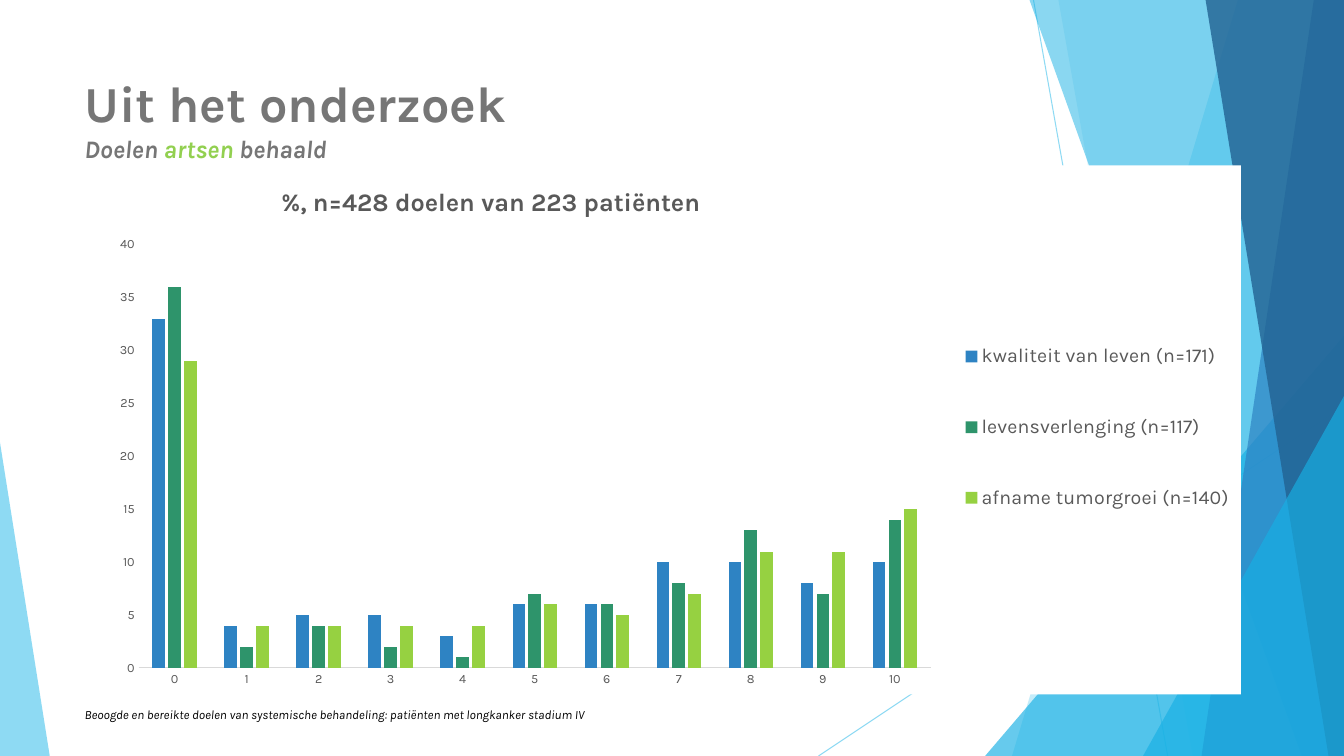
from lxml import etree
from pptx import Presentation
from pptx.chart.data import CategoryChartData
from pptx.dml.color import RGBColor
from pptx.enum.chart import XL_CHART_TYPE, XL_LEGEND_POSITION, XL_TICK_MARK
from pptx.enum.shapes import MSO_CONNECTOR, MSO_SHAPE
from pptx.enum.text import MSO_ANCHOR
from pptx.oxml import parse_xml
from pptx.oxml.ns import nsdecls, qn
from pptx.util import Inches, Pt

COLUMN_CHART = XL_CHART_TYPE.COLUMN_CLUSTERED
LEGEND_RIGHT = XL_LEGEND_POSITION.RIGHT
NO_TICK = XL_TICK_MARK.NONE
STRAIGHT = MSO_CONNECTOR.STRAIGHT
TRIANGLE = MSO_SHAPE.ISOSCELES_TRIANGLE
TOP, MIDDLE = MSO_ANCHOR.TOP, MSO_ANCHOR.MIDDLE

SKY, CYAN, BLUE, NAVY = "5FCBEF", "17B0E4", "2E83C3", "226292"
GREY, DARK_GREY, PALE_GREY = "767676", "595959", "D9D9D9"
BLACK, WHITE, LIME = "000000", "FFFFFF", "92D050"

RAYS = [((76.9, 0), (86.88, 100)), ((100, 53.7), (60.9, 100))]
BACK_BANDS = [(92.1, 75.3, SKY, 36), (78.75, 88.75, SKY, 20)]
FRONT_BANDS = [(76.6, 96.85, CYAN, 50), (97.75, 89.4, BLUE, 70), (89.7, 98.85, NAVY, 80)]

SERIES = [
    ("kwaliteit van leven (n=171)", (33, 4, 5, 5, 3, 6, 6, 10, 10, 8, 10), BLUE),
    ("levensverlenging (n=117)", (36, 2, 4, 2, 1, 7, 6, 8, 13, 7, 14), "2E946B"),
    ("afname tumorgroei (n=140)", (29, 4, 4, 4, 4, 6, 5, 7, 11, 11, 15), "96D141"),
]


def color(value):
    return RGBColor.from_string(value)


class SlideBuilder:
    font_name = "Karla"

    def __init__(self, presentation):
        self.column = presentation.slide_width / 100
        self.row = presentation.slide_height / 100
        self.slide = presentation.slides.add_slide(presentation.slide_layouts[6])
        self.shapes = self.slide.shapes

    def point(self, x, y):
        return round(x * self.column), round(y * self.row)

    def box(self, left, top, width, height):
        return (*self.point(left, top), *self.point(width, height))

    def style_font(self, font, size, font_color, bold=False, italic=False):
        font.name = self.font_name
        font.size = Pt(size)
        font.color.rgb = color(font_color)
        font.bold = bold
        font.italic = italic

    def set_opacity(self, shape, percent):
        for node in shape.element.iter(qn("a:srgbClr")):
            etree.SubElement(node, qn("a:alpha")).set("val", str(percent * 1000))

    def paint(self, shape, fill_color, opacity):
        shape.shadow.inherit = False
        shape.fill.solid()
        shape.fill.fore_color.rgb = color(fill_color)
        shape.line.fill.background()
        self.set_opacity(shape, opacity)

    def ray(self, start, end):
        connector = self.shapes.add_connector(STRAIGHT, *self.point(*start), *self.point(*end))
        connector.line.color.rgb = color(SKY)
        connector.line.width = Pt(0.75)
        self.set_opacity(connector, 70)
        etree.SubElement(connector.element.spPr, qn("a:effectLst"))

    def band(self, top_x, bottom_x, fill_color, opacity):
        builder = self.shapes.build_freeform(*self.point(top_x, 0))
        corners = [(100, 0), (100, 100), (bottom_x, 100)]
        builder.add_line_segments([self.point(*corner) for corner in corners], close=True)
        self.paint(builder.convert_to_shape(), fill_color, opacity)

    def triangle(self, box, peak, fill_color, opacity):
        shape = self.shapes.add_shape(TRIANGLE, *self.box(*box))
        shape.adjustments[0] = peak
        self.paint(shape, fill_color, opacity)

    def text(self, box, lines, anchor):
        frame = self.shapes.add_textbox(*self.box(*box)).text_frame
        frame.word_wrap = True
        frame.vertical_anchor = anchor
        paragraph = frame.paragraphs[0]
        for index, runs in enumerate(lines):
            if index:
                paragraph.add_line_break()
            for words, *style in runs:
                run = paragraph.add_run()
                run.text = words
                self.style_font(run.font, *style)

    def place_part(self, part, after, inner=False, **shares):
        for layout in part.findall(qn("c:layout")):
            part.remove(layout)
        target = '<c:layoutTarget val="inner"/>' if inner else ""
        modes = "".join(f'<c:{side}Mode val="edge"/>' for side in "xy")
        values = "".join(f'<c:{name} val="{share}"/>' for name, share in shares.items())
        layout = parse_xml(
            f'<c:layout {nsdecls("c")}><c:manualLayout>{target}{modes}{values}'
            "</c:manualLayout></c:layout>"
        )
        part.insert(0 if after is None else part.index(part.find(qn(after))) + 1, layout)

    def chart(self, box, title, categories, series_list):
        data = CategoryChartData()
        data.categories = categories
        for name, values, _ in series_list:
            data.add_series(name, values)
        chart = self.shapes.add_chart(COLUMN_CHART, *self.box(*box), data).chart
        self.style_font(chart.font, 10, BLACK)

        plot = chart.plots[0]
        plot.gap_width = 219
        plot.overlap = -27
        plot.vary_by_categories = False
        for series, (_, _, fill_color) in zip(plot.series, series_list):
            series.format.fill.solid()
            series.format.fill.fore_color.rgb = color(fill_color)

        for axis in (chart.category_axis, chart.value_axis):
            axis.major_tick_mark = axis.minor_tick_mark = NO_TICK
            axis.has_major_gridlines = False
            self.style_font(axis.tick_labels.font, 9, DARK_GREY)
        chart.category_axis.format.line.color.rgb = color(PALE_GREY)
        chart.category_axis.format.line.width = Pt(0.75)
        value_axis = chart.value_axis
        value_axis.format.line.fill.background()
        value_axis.minimum_scale, value_axis.maximum_scale = 0, 40
        value_axis.major_unit = 5

        chart.has_title = True
        run = chart.chart_title.text_frame.paragraphs[0].add_run()
        run.text = title
        self.style_font(run.font, 18, DARK_GREY, bold=True)
        chart.has_legend = True
        chart.legend.position = LEGEND_RIGHT
        chart.legend.include_in_layout = False
        self.style_font(chart.legend.font, 14, DARK_GREY)

        chart_space = chart.element
        body = chart_space.find(qn("c:chart"))
        self.place_part(body.find(qn("c:title")), "c:tx", x=0.16, y=0.03)
        self.place_part(body.find(qn("c:plotArea")), None, True, x=0.04, y=0.15, w=0.69, h=0.8)
        self.place_part(body.find(qn("c:legend")), "c:legendPos", x=0.75, y=0.25, w=0.25, h=0.49)
        body.addnext(parse_xml(
            f'<c:spPr {nsdecls("c", "a")}><a:solidFill><a:srgbClr val="{WHITE}"/></a:solidFill>'
            "<a:ln><a:noFill/></a:ln></c:spPr>"
        ))


def main():
    presentation = Presentation()
    presentation.slide_width = Inches(13.33)
    presentation.slide_height = Inches(7.5)
    builder = SlideBuilder(presentation)

    for ray in RAYS:
        builder.ray(*ray)
    for band in BACK_BANDS:
        builder.band(*band)
    builder.triangle((73.3, 44.4, 26.7, 55.6), 1, CYAN, 66)
    for band in FRONT_BANDS:
        builder.band(*band)
    builder.triangle((85.05, 52.4, 14.95, 47.6), 1, CYAN, 66)
    builder.triangle((0, 58.55, 3.7, 41.45), 0, SKY, 70)

    categories = [str(score) for score in range(11)]
    builder.chart((6.9, 21.87, 85.43, 70), "%, n=428 doelen van 223 patiënten", categories, SERIES)
    builder.text((5.55, 8.93, 70.5, 19.2), [
        [("Uit het onderzoek", 36, GREY, True)],
        [
            ("Doelen ", 18, GREY, True, True),
            ("artsen", 18, LIME, True, True),
            (" behaald", 18, GREY, True, True),
        ],
    ], TOP)
    source = (
        "Beoogde en bereikte doelen van systemische behandeling: "
        "patiënten met longkanker stadium IV"
    )
    builder.text((5.55, 91.87, 51.7, 5.33), [[(source, 9, BLACK, False, True)]], MIDDLE)
    presentation.save("out.pptx")


if __name__ == "__main__":
    main()
